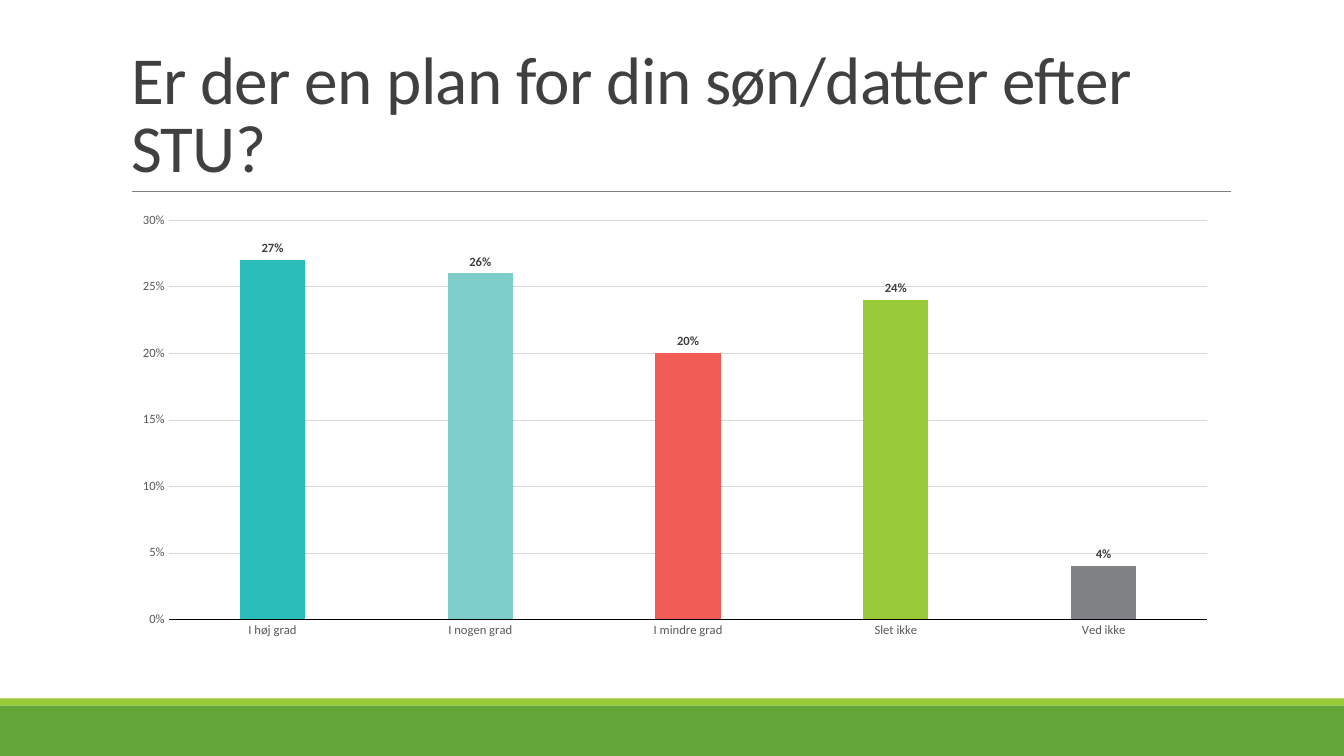
from lxml import etree
from pptx import Presentation
from pptx.chart.data import CategoryChartData as ChartData
from pptx.dml.color import RGBColor
from pptx.enum.chart import XL_CHART_TYPE as ChartType
from pptx.enum.chart import XL_LABEL_POSITION as LabelPosition
from pptx.enum.chart import XL_TICK_MARK as TickMark
from pptx.enum.shapes import MSO_CONNECTOR as Connector
from pptx.enum.shapes import MSO_SHAPE as Shape
from pptx.enum.text import MSO_ANCHOR as Anchor
from pptx.enum.text import MSO_AUTO_SIZE as AutoSize
from pptx.enum.text import PP_ALIGN as Align
from pptx.oxml import parse_xml
from pptx.oxml.ns import nsdecls, qn
from pptx.util import Cm, Pt

FONT = "Calibri"
GREEN = RGBColor(0x63, 0xA5, 0x37)
LIME = RGBColor(0x99, 0xCB, 0x38)
TEAL = RGBColor(0x2B, 0xBD, 0xBA)
PALE_TEAL = RGBColor(0x7D, 0xCD, 0xCA)
CORAL = RGBColor(0xF1, 0x5D, 0x54)
GREY = RGBColor(0x80, 0x82, 0x85)
RULE_GREY = RGBColor(0x80, 0x80, 0x80)
GRID_GREY = RGBColor(0xD9, 0xD9, 0xD9)
AXIS_TEXT = RGBColor(0x59, 0x59, 0x59)
DARK = RGBColor(0x40, 0x40, 0x40)
BLACK = RGBColor(0, 0, 0)

PAGE_WIDTH, PAGE_HEIGHT = Cm(33.87), Cm(19.05)
ANSWERS = [
    ("I høj grad", 0.27, TEAL),
    ("I nogen grad", 0.26, PALE_TEAL),
    ("I mindre grad", 0.20, CORAL),
    ("Slet ikke", 0.24, LIME),
    ("Ved ikke", 0.04, GREY),
]


def style_font(font, size, color, bold=False):
    font.name, font.size, font.bold = FONT, Pt(size), bold
    font.color.rgb = color


def add_footer_bands(page, left, top, width, height):
    """A lime strip on top of a green band."""
    strip = Cm(0.18)
    bands = [(top, strip, LIME), (top + strip, height - strip, GREEN)]
    for band_top, band_height, color in bands:
        band = page.shapes.add_shape(
            Shape.RECTANGLE, left, band_top, width, band_height)
        band.shadow.inherit = False
        band.fill.solid()
        band.fill.fore_color.rgb = color
        band.line.fill.background()


def add_title(page, left, top, width, height, text):
    """The heading, with a thin rule along its bottom edge."""
    box = page.shapes.title
    box.left, box.top, box.width, box.height = left, top, width, height
    frame = box.text_frame
    frame.word_wrap = True
    frame.auto_size = AutoSize.NONE
    frame.vertical_anchor = Anchor.BOTTOM
    para = frame.paragraphs[0]
    para.alignment = Align.LEFT
    para.line_spacing = 0.85
    span = para.add_run()
    span.text = text
    style_font(span.font, 48, DARK)
    span.font._element.set("spc", "-50")

    bottom = top + height
    rule_left = left + Cm(0.28)
    rule = page.shapes.add_connector(
        Connector.STRAIGHT, rule_left, bottom, rule_left + Cm(27.69), bottom)
    rule.line.color.rgb = RULE_GREY
    rule.line.width = Pt(0.5)
    etree.SubElement(rule._element.spPr, qn("a:effectLst"))


def set_plot_layout(chart, x, y, w, h):
    """Fix the inner plot area, in fractions of the chart."""
    area = chart._chartSpace.chart.plotArea
    for layout in area.findall(qn("c:layout")):
        area.remove(layout)
    sizes = "".join(f'<c:{key} val="{value}"/>' for key, value in
                    [("x", x), ("y", y), ("w", w), ("h", h)])
    area.insert(0, parse_xml(
        f'<c:layout {nsdecls("c")}><c:manualLayout>'
        '<c:layoutTarget val="inner"/><c:xMode val="edge"/>'
        f'<c:yMode val="edge"/>{sizes}</c:manualLayout></c:layout>'))


def add_answer_chart(page, left, top, width, height):
    """One column for each answer, in its own colour."""
    data = ChartData(number_format="0%")
    data.categories = [name for name, _, _ in ANSWERS]
    data.add_series("Series 1", [value for _, value, _ in ANSWERS])
    chart = page.shapes.add_chart(
        ChartType.COLUMN_CLUSTERED, left, top, width, height, data).chart
    chart.has_legend = False
    chart.has_title = False
    style_font(chart.font, 10, BLACK)
    set_plot_layout(chart, 0.043, 0.037, 0.937, 0.9)

    # Axes
    for axis in (chart.category_axis, chart.value_axis):
        axis.major_tick_mark = axis.minor_tick_mark = TickMark.NONE
        style_font(axis.tick_labels.font, 9, AXIS_TEXT)
    chart.category_axis.format.line.color.rgb = BLACK
    chart.category_axis.format.line.width = Pt(0.1)
    values = chart.value_axis
    values.minimum_scale, values.maximum_scale = 0, 0.3
    values.major_unit = 0.05
    values.format.line.fill.background()
    values.tick_labels.number_format = "0%"
    values.tick_labels.number_format_is_linked = False
    values.has_major_gridlines = True
    values.major_gridlines.format.line.color.rgb = GRID_GREY
    values.major_gridlines.format.line.width = Pt(0.1)

    # Columns
    plot = chart.plots[0]
    plot.gap_width, plot.overlap = 219, -27
    plot.vary_by_categories = False
    series = plot.series[0]
    series.format.fill.solid()
    series.format.fill.fore_color.rgb = LIME
    for index, (_, _, color) in enumerate(ANSWERS):
        fill = series.points[index].format.fill
        fill.solid()
        fill.fore_color.rgb = color

    # Value labels
    labels = series.data_labels
    labels.show_value = True
    labels.position = LabelPosition.OUTSIDE_END
    labels.number_format = "0%"
    labels.number_format_is_linked = False
    style_font(labels.font, 9, DARK, bold=True)


def main():
    deck = Presentation()
    deck.slide_width, deck.slide_height = PAGE_WIDTH, PAGE_HEIGHT
    page = deck.slides.add_slide(deck.slide_layouts[5])
    left, width = Cm(3.05), Cm(27.94)
    footer = Cm(1.45)
    add_footer_bands(page, 0, PAGE_HEIGHT - footer, PAGE_WIDTH, footer)
    add_title(page, left, Cm(0.79), width, Cm(4.04),
              "Er der en plan for din søn/datter efter STU?")
    add_answer_chart(page, left, Cm(5.13), width, Cm(11.18))
    deck.save("out.pptx")


if __name__ == "__main__":
    main()
